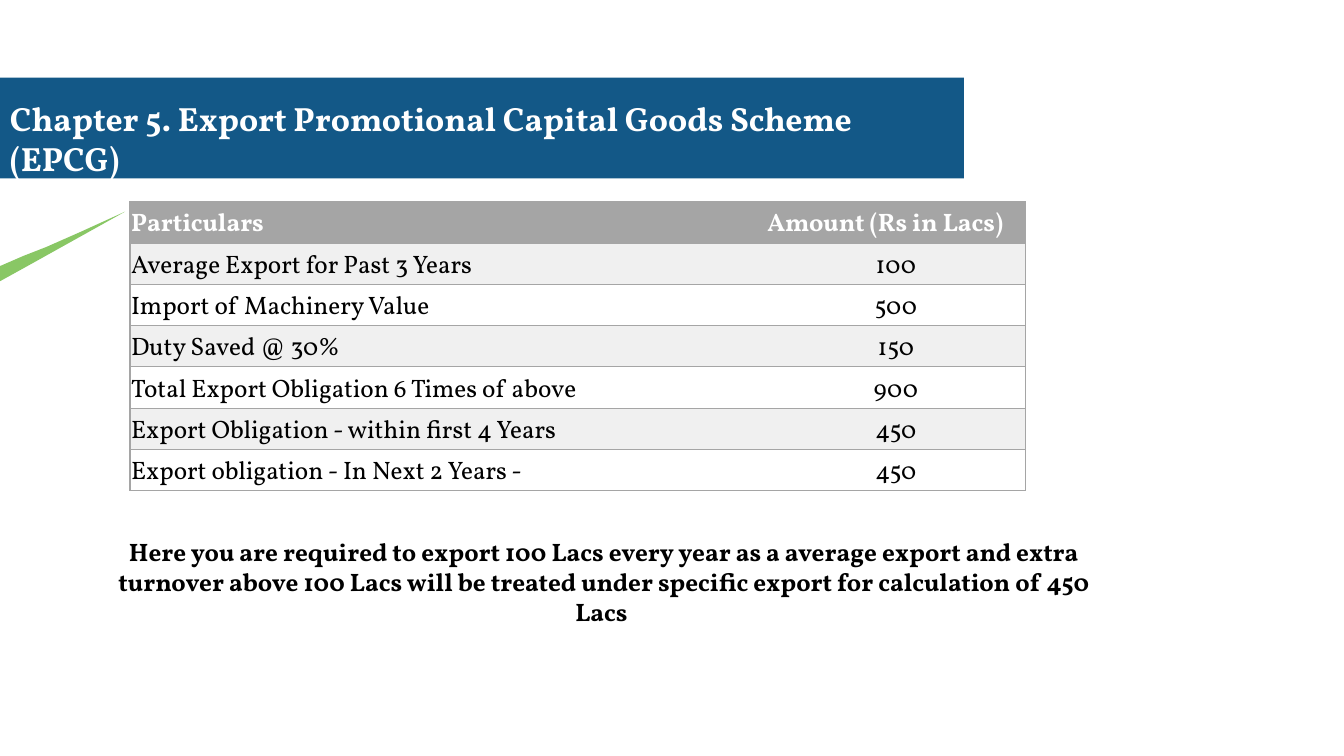
"""Build the export promotion scheme slide with its worked example table."""
from lxml.etree import SubElement
from pptx import Presentation
from pptx.dml.color import RGBColor
from pptx.enum.shapes import MSO_SHAPE as Shape
from pptx.enum.text import MSO_ANCHOR as Anchor, PP_ALIGN as Align
from pptx.oxml.ns import qn
from pptx.util import Inches, Pt

FONT = "Vollkorn"
WHITE, BLACK, GREY, STRIPE = "FFFFFF", "000000", "A5A5A5", "F0F0F0"
BLUE, GREEN = "135887", "89C765"

TITLE = "Chapter 5. Export Promotional Capital Goods Scheme (EPCG)"
ROWS = [
    ("Particulars", "Amount (Rs in Lacs)"),
    ("Average Export for Past 3 Years", "100"),
    ("Import of Machinery Value", "500"),
    ("Duty Saved @ 30%", "150"),
    ("Total Export Obligation 6 Times of above", "900"),
    ("Export Obligation - within first 4 Years", "450"),
    ("Export obligation - In Next 2 Years -", "450"),
]
NOTE = (
    "Here you are required to export 100 Lacs every year as a average export "
    "and extra turnover above 100 Lacs will be treated under specific export "
    "for calculation of 450 Lacs "
)
COLUMN_WIDTHS = (6.31, 2.57)
ROW_HEIGHT = 0.41
SWOOSH = [(1.24, 2.1), (1.13, 2.15), (0.8, 2.3), (0.46, 2.45), (0.23, 2.54),
          (0, 2.64), (0, 2.79), (0.29, 2.63)]


def rgb(value):
    return RGBColor.from_string(value)


def paint(shape, color):
    shape.shadow.inherit = False
    shape.fill.solid()
    shape.fill.fore_color.rgb = rgb(color)
    shape.line.fill.background()


def write(text_frame, text, size, color, bold, align=Align.LEFT):
    text_frame.text = text
    paragraph = text_frame.paragraphs[0]
    paragraph.alignment = align
    font = paragraph.runs[0].font
    font.name, font.size, font.bold = FONT, Pt(size), bold
    font.color.rgb = rgb(color)


def add_text(slide, box, text, size, color, align=Align.LEFT):
    text_frame = slide.shapes.add_textbox(*map(Inches, box)).text_frame
    text_frame.word_wrap = True
    write(text_frame, text, size, color, True, align)


def set_borders(cell, sides):
    properties = cell._tc.get_or_add_tcPr()
    for position, side in enumerate("LRTB"):
        line = properties.makeelement(qn(f"a:ln{side}"), {"w": str(Pt(1))})
        if side in sides:
            fill = SubElement(line, qn("a:solidFill"))
            SubElement(fill, qn("a:srgbClr"), val=GREY)
        else:
            SubElement(line, qn("a:noFill"))
        properties.insert(position, line)


def add_amounts(slide, left, top):
    frame = slide.shapes.add_table(
        len(ROWS), len(COLUMN_WIDTHS), Inches(left), Inches(top),
        Inches(sum(COLUMN_WIDTHS)), Inches(ROW_HEIGHT * len(ROWS)))
    table = frame.table
    for column, width in zip(table.columns, COLUMN_WIDTHS):
        column.width = Inches(width)
    for row_index, values in enumerate(ROWS):
        table.rows[row_index].height = Inches(ROW_HEIGHT)
        header = row_index == 0
        fill = GREY if header else STRIPE if row_index % 2 else WHITE
        for column_index, value in enumerate(values):
            cell = table.cell(row_index, column_index)
            cell.margin_left = cell.margin_right = cell.margin_top = Inches(0.01)
            cell.margin_bottom = 0
            cell.vertical_anchor = Anchor.BOTTOM
            cell.fill.solid()
            cell.fill.fore_color.rgb = rgb(fill)
            centred = column_index == 1 and not header
            write(cell.text_frame, value, 18, WHITE if header else BLACK, header,
                  Align.CENTER if centred else Align.LEFT)
            set_borders(cell, "RTB" if column_index else "LTB")


def main():
    presentation = Presentation()
    presentation.slide_width = Inches(13.33)
    presentation.slide_height = Inches(7.5)
    slide = presentation.slides.add_slide(presentation.slide_layouts[6])

    points = [(Inches(x), Inches(y)) for x, y in SWOOSH]
    builder = slide.shapes.build_freeform(*points[0])
    builder.add_line_segments(points[1:], close=True)
    paint(builder.convert_to_shape(), GREEN)

    banner = slide.shapes.add_shape(
        Shape.RECTANGLE, 0, Inches(0.77), Inches(9.56), Inches(1))
    paint(banner, BLUE)
    add_text(slide, (0, 0.92, 9.59, 0.5), TITLE, 24, WHITE)
    add_amounts(slide, 1.29, 2)
    add_text(slide, (1, 5.27, 9.98, 1.31), NOTE, 18, BLACK, Align.CENTER)
    presentation.save("out.pptx")


if __name__ == "__main__":
    main()
